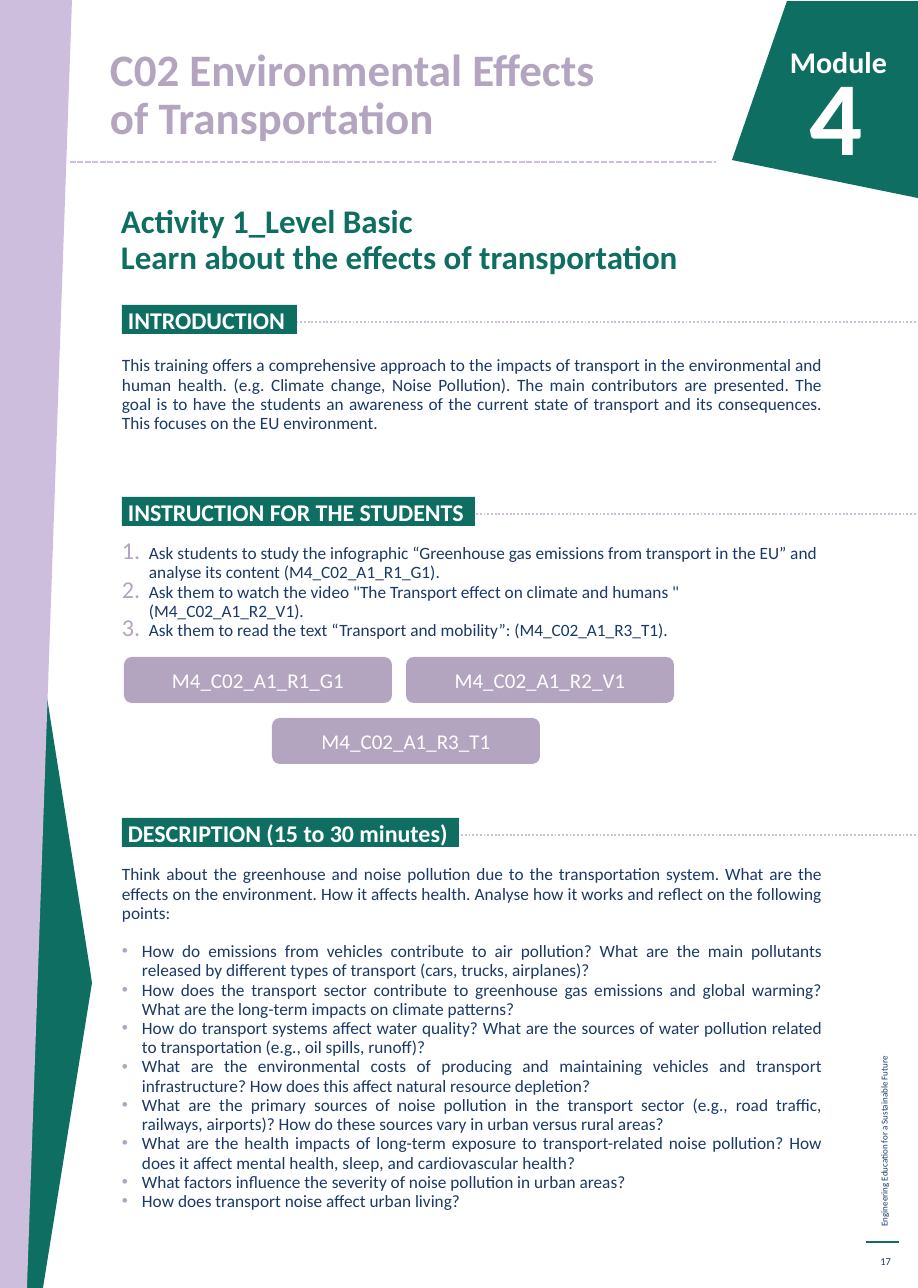
from pptx import Presentation
from pptx.dml.color import RGBColor
from pptx.enum.dml import MSO_LINE as Dash
from pptx.enum.shapes import MSO_CONNECTOR as Connector, MSO_SHAPE as Preset
from pptx.enum.text import MSO_ANCHOR as Anchor, MSO_AUTO_SIZE as AutoSize, PP_ALIGN as Align
from pptx.oxml.xmlchemy import OxmlElement
from pptx.util import Emu, Pt

PX = 914400 / 108
GREEN, LILAC, MAUVE, NAVY, WHITE = "0E6E61", "CEBEDD", "B3A5C0", "1A3966", "FFFFFF"
BODY_LEFT, BODY_WIDTH = 122, 700
BODY = {"size": 11.5, "color": NAVY, "spacing": Pt(12.8), "inset": (0, 0)}

INTRODUCTION = (
    "This training offers a comprehensive approach to the impacts of transport in the "
    "environmental and human health. (e.g. Climate change, Noise Pollution). The main "
    "contributors are presented. The goal is to have the students an awareness of the current "
    "state of transport and its consequences. This focuses on the EU environment."
)
STEPS = [
    "Ask students to study the infographic “Greenhouse gas emissions from transport in the EU” "
    "and analyse its content (M4_C02_A1_R1_G1).",
    'Ask them to watch the video "The Transport effect on climate and humans " (M4_C02_A1_R2_V1).',
    "Ask them to read the text “Transport and mobility”: (M4_C02_A1_R3_T1).",
]
DESCRIPTION = (
    "Think about the greenhouse and noise pollution due to the transportation system. What are "
    "the effects on the environment. How it affects health. Analyse how it works and reflect on "
    "the following points:"
)
QUESTIONS = [
    "How do emissions from vehicles contribute to air pollution? What are the main pollutants "
    "released by different types of transport (cars, trucks, airplanes)?",
    "How does the transport sector contribute to greenhouse gas emissions and global warming? "
    "What are the long-term impacts on climate patterns?",
    "How do transport systems affect water quality? What are the sources of water pollution "
    "related to transportation (e.g., oil spills, runoff)?",
    "What are the environmental costs of producing and maintaining vehicles and transport "
    "infrastructure? How does this affect natural resource depletion?",
    "What are the primary sources of noise pollution in the transport sector (e.g., road traffic, "
    "railways, airports)? How do these sources vary in urban versus rural areas?",
    "What are the health impacts of long-term exposure to transport-related noise pollution? How "
    "does it affect mental health, sleep, and cardiovascular health?",
    "What factors influence the severity of noise pollution in urban areas?",
    "How does transport noise affect urban living?",
]
SECTIONS = [
    ("INTRODUCTION", 322, 175),
    ("INSTRUCTION FOR THE STUDENTS", 514, 353),
    ("DESCRIPTION (15 to 30 minutes)", 835, 337),
]
RESOURCES = [
    ("M4_C02_A1_R1_G1", 124, 657),
    ("M4_C02_A1_R2_V1", 406, 657),
    ("M4_C02_A1_R3_T1", 272, 718),
]


def px(length):
    """Turn pixels into EMU."""
    return Emu(round(length * PX))


def rgb(value):
    """Turn a hex string into a colour."""
    return RGBColor.from_string(value)


def write(shape, paragraphs, size, color, bold=False, align=Align.LEFT, anchor=Anchor.TOP,
          spacing=1.0, inset=(11, 5)):
    """Fill a shape with formatted paragraphs."""
    frame = shape.text_frame
    frame.word_wrap, frame.auto_size, frame.vertical_anchor = True, AutoSize.NONE, anchor
    frame.margin_left = frame.margin_right = px(inset[0])
    frame.margin_top = frame.margin_bottom = px(inset[1])
    frame.text = "\n".join(paragraphs)
    for paragraph in frame.paragraphs:
        paragraph.alignment, paragraph.line_spacing = align, spacing
        paragraph.space_before = paragraph.space_after = Pt(0)
        for run in paragraph.runs:
            run.font.name, run.font.size, run.font.bold = "Calibri", Pt(size), bold
            run.font.color.rgb = rgb(color)
    return frame


def add_text(slide, box, paragraphs, **style):
    """Add a text box."""
    label = slide.shapes.add_textbox(*map(px, box))
    write(label, paragraphs, **style)
    return label


def fill_placeholder(placeholder, box, paragraphs, **style):
    """Move a placeholder and write into it."""
    placeholder.left, placeholder.top, placeholder.width, placeholder.height = map(px, box)
    return write(placeholder, paragraphs, **style)


def add_marker(paragraph, indent, tag, **attributes):
    """Give a paragraph a hanging mark, or none."""
    properties = paragraph._p.get_or_add_pPr()
    properties.set("marL", str(px(indent)))
    properties.set("indent", str(px(-indent)))
    if tag != "a:buNone":
        mark_color, tint = OxmlElement("a:buClr"), OxmlElement("a:srgbClr")
        tint.set("val", MAUVE)
        mark_color.append(tint)
        properties.append(mark_color)
    if tag == "a:buAutoNum":
        mark_size = OxmlElement("a:buSzPct")
        mark_size.set("val", "140000")
        properties.append(mark_size)
    mark = OxmlElement(tag)
    for key, value in attributes.items():
        mark.set(key, value)
    properties.append(mark)


def paint(shape, color):
    """Fill a shape flat, without outline or shadow."""
    shape.shadow.inherit = False
    shape.fill.solid()
    shape.fill.fore_color.rgb = rgb(color)
    shape.line.fill.background()


def add_panel(slide, color, start, *corners):
    """Add a filled polygon."""
    builder = slide.shapes.build_freeform(*start, scale=PX)
    builder.add_line_segments(corners, close=True)
    paint(builder.convert_to_shape(), color)


def add_label(slide, preset, box, color, text, **style):
    """Add a filled shape with white text."""
    label = slide.shapes.add_shape(preset, *map(px, box))
    paint(label, color)
    write(label, [text], color=WHITE, anchor=Anchor.MIDDLE, **style)


def add_rule(slide, left, right, y, color, width, dash=None):
    """Add a horizontal line."""
    rule = slide.shapes.add_connector(Connector.STRAIGHT, px(left), px(y), px(right), px(y))
    rule.line.color.rgb, rule.line.width = rgb(color), Pt(width)
    if dash:
        rule.line.dash_style = dash
    rule._element.spPr.append(OxmlElement("a:effectLst"))


def add_margins(slide):
    """Add the side panels, running text and page number."""
    add_panel(slide, GREEN, (43, 1288), (25, 1288), (25, 558), (90, 969), (92, 983))
    add_panel(slide, LILAC, (0, 0), (72, 0), (27, 1288), (0, 1288))
    running_text = add_text(slide, (642, 984, 485, 22),
                            ["Engineering Education for a Sustainable Future"],
                            size=6, color=NAVY)
    running_text.rotation = 270
    add_rule(slide, 866, 899, 1242, GREEN, 0.75)
    add_text(slide, (866, 1246, 36, 31), ["17"], size=7, color=NAVY,
             align=Align.RIGHT, anchor=Anchor.MIDDLE)


def add_header(slide):
    """Add the title, module badge and activity heading."""
    fill_placeholder(slide.shapes.title, (99, 30, 647, 119),
                     ["C02 Environmental Effects", "of Transportation"],
                     size=30, color=MAUVE, bold=True, anchor=Anchor.BOTTOM, spacing=0.89)
    add_rule(slide, 70, 716, 162, LILAC, 1.25, Dash.SQUARE_DOT)
    add_panel(slide, GREEN, (918, 1), (787, 1), (732, 160), (918, 198))
    for text, left, top, size in [("Module", 704, 38, 20), ("4", 680, 46, 70)]:
        add_text(slide, (left, top, 194, 153), [text], size=size, color=WHITE,
                 bold=True, align=Align.RIGHT)
    add_text(slide, (110, 200, 598, 113),
             ["Activity 1_Level Basic\vLearn about the effects of transportation"],
             size=22, color=GREEN, bold=True, spacing=0.9)


def add_sections(slide):
    """Add the three sections with their headings and resources."""
    for heading, y, width in SECTIONS:
        add_rule(slide, 274, 918, y, LILAC, 1.25, Dash.ROUND_DOT)
        add_label(slide, Preset.RECTANGLE, (BODY_LEFT, y - 17, width, 29), GREEN, heading,
                  size=16, bold=True, inset=(6, 0))
    add_text(slide, (BODY_LEFT, 356, BODY_WIDTH, 80), [INTRODUCTION],
             align=Align.JUSTIFY, **BODY)
    steps = fill_placeholder(slide.placeholders[1], (BODY_LEFT, 544, BODY_WIDTH, 100),
                             STEPS, **BODY)
    for step in steps.paragraphs:
        add_marker(step, 27, "a:buAutoNum", type="arabicPeriod")
    for code, left, top in RESOURCES:
        add_label(slide, Preset.ROUNDED_RECTANGLE, (left, top, 268, 46), MAUVE, code,
                  size=14, align=Align.CENTER)
    questions = fill_placeholder(slide.placeholders[2], (BODY_LEFT, 865, BODY_WIDTH, 350),
                                 [DESCRIPTION, *QUESTIONS], align=Align.JUSTIFY, **BODY)
    description, *points = questions.paragraphs
    description.space_after = BODY["spacing"]
    add_marker(description, 0, "a:buNone")
    for point in points:
        add_marker(point, 20, "a:buChar", char="•")


def main():
    """Build the activity page."""
    deck = Presentation()
    deck.slide_width, deck.slide_height = px(918), px(1288)
    slide = deck.slides.add_slide(deck.slide_layouts[3])
    add_margins(slide)
    add_header(slide)
    add_sections(slide)
    deck.save("out.pptx")


if __name__ == "__main__":
    main()
